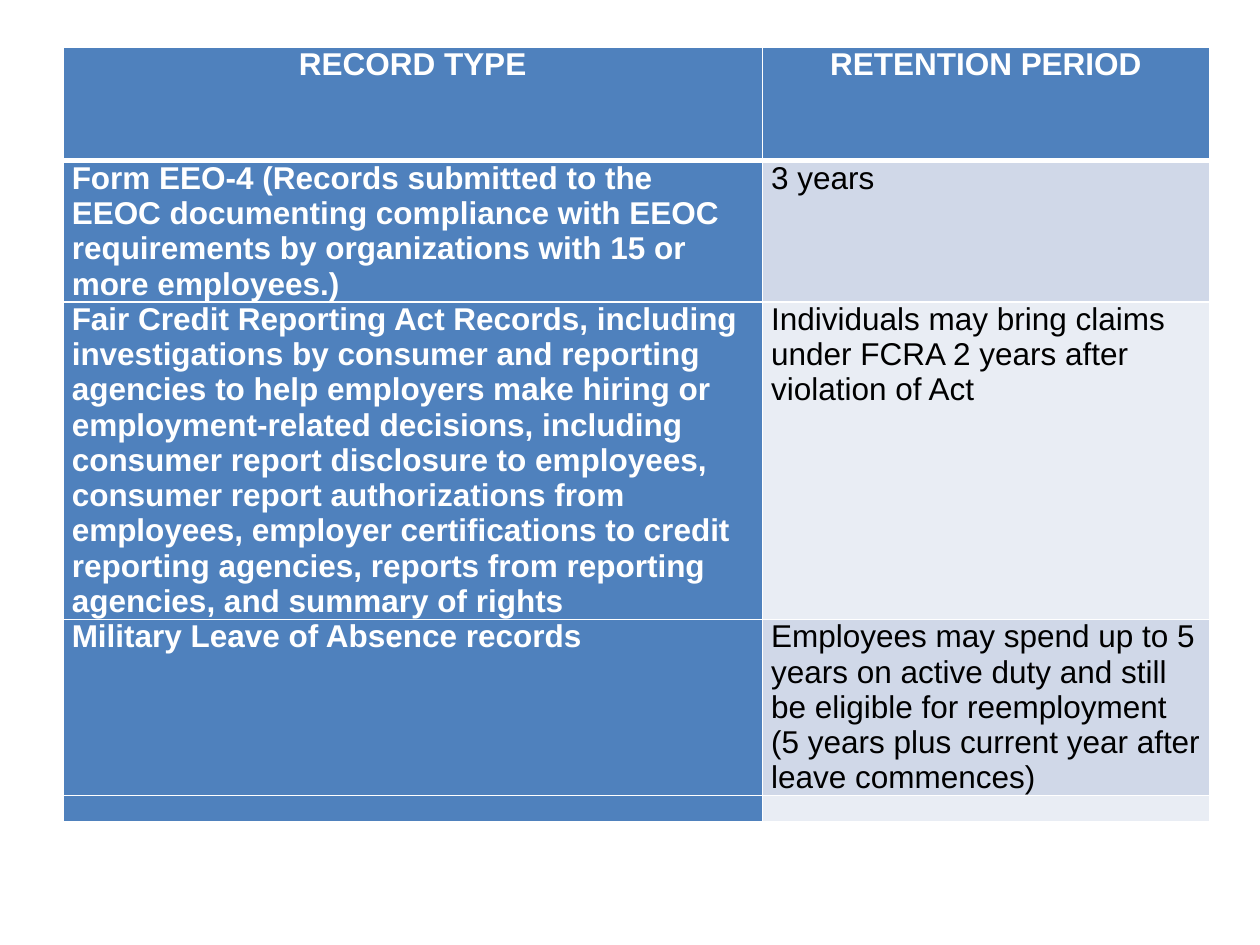
import pptx
import pptx.dml.color
import pptx.enum.text
import pptx.oxml
import pptx.oxml.ns
import pptx.util

WHITE = pptx.dml.color.RGBColor(0xFF, 0xFF, 0xFF)
BLACK = pptx.dml.color.RGBColor(0x00, 0x00, 0x00)
BLUE = pptx.dml.color.RGBColor(0x4F, 0x81, 0xBD)
BAND_DARK = pptx.dml.color.RGBColor(0xD0, 0xD8, 0xE8)
BAND_LIGHT = pptx.dml.color.RGBColor(0xE9, 0xED, 0xF4)

FONT = "Arial"
TEXT_SIZE = 18
EMPTY_SIZE = 12
COLUMN_SHARES = [0.61, 0.39]
ROW_UNITS = [2, 2, 4, 3, 0.15]

# Each cell is a list of paragraphs
RECORDS = [
    (["RECORD TYPE"], ["RETENTION PERIOD"]),
    (["Form EEO-4 (Records submitted to the",
      "EEOC documenting compliance with EEOC requirements by organizations with 15 or",
      "more employees.)"],
     ["3 years"]),
    (["Fair Credit Reporting Act Records, including investigations by consumer "
      "and reporting agencies to help employers make hiring or employment-related "
      "decisions, including consumer report disclosure to employees, consumer report "
      "authorizations from employees, employer certifications to credit reporting "
      "agencies, reports from reporting agencies, and summary of rights"],
     ["Individuals may bring claims under FCRA 2 years after violation of Act"]),
    (["Military Leave of Absence records"],
     ["Employees may spend up to 5 years on active duty and still be eligible for "
      "reemployment (5 years plus current year after leave commences)"]),
    ([], []),
]


def set_borders(cell, bottom_width):
    """White rules on all sides; they must precede the fill in the cell's XML."""
    properties = cell._tc.get_or_add_tcPr()
    for side, width in (("L", 1), ("R", 1), ("T", 1), ("B", bottom_width)):
        properties.append(pptx.oxml.parse_xml(
            f'<a:ln{side} {pptx.oxml.ns.nsdecls("a")} w="{pptx.util.Pt(width)}">'
            f'<a:solidFill><a:srgbClr val="{WHITE}"/></a:solidFill></a:ln{side}>'))


def write_cell(cell, paragraphs, color, bold, alignment):
    cell.margin_left = cell.margin_right = pptx.util.Inches(0.07)
    cell.margin_top = cell.margin_bottom = 0
    frame = cell.text_frame
    for index, wording in enumerate(paragraphs):
        paragraph = frame.add_paragraph() if index else frame.paragraphs[0]
        paragraph.alignment = alignment
        run = paragraph.add_run()
        run.text = wording
        run.font.name = FONT
        run.font.size = pptx.util.Pt(TEXT_SIZE)
        run.font.bold = bold
        run.font.color.rgb = color
    if not paragraphs:
        # An empty cell keeps a small line so that its row stays thin
        frame.paragraphs[0]._p.append(pptx.oxml.parse_xml(
            f'<a:endParaRPr {pptx.oxml.ns.nsdecls("a")} sz="{EMPTY_SIZE * 100}"/>'))


def add_retention_table(slide, left, top, width, row_unit):
    height = int(sum(ROW_UNITS) * row_unit)
    table = slide.shapes.add_table(
        len(RECORDS), len(COLUMN_SHARES), left, top, width, height).table
    for column, share in zip(table.columns, COLUMN_SHARES):
        column.width = int(width * share)
    for row, units in zip(table.rows, ROW_UNITS):
        row.height = int(row_unit * units)

    for row_index, record in enumerate(RECORDS):
        is_header = row_index == 0
        band = BAND_DARK if row_index % 2 else BAND_LIGHT
        for column_index, paragraphs in enumerate(record):
            cell = table.cell(row_index, column_index)
            is_heading = is_header or column_index == 0
            set_borders(cell, 3 if is_header else 1)
            cell.fill.solid()
            cell.fill.fore_color.rgb = BLUE if is_heading else band
            write_cell(
                cell, paragraphs, WHITE if is_heading else BLACK, is_heading,
                pptx.enum.text.PP_ALIGN.CENTER if is_header
                else pptx.enum.text.PP_ALIGN.LEFT)


def main():
    presentation = pptx.Presentation()
    presentation.slide_width = pptx.util.Inches(10)
    presentation.slide_height = pptx.util.Inches(7.5)
    slide_width, slide_height = presentation.slide_width, presentation.slide_height
    slide = presentation.slides.add_slide(presentation.slide_layouts[6])
    add_retention_table(
        slide, int(slide_width * 0.05), int(slide_height * 0.05),
        int(slide_width * 0.91), int(slide_height * 0.06))
    presentation.save("out.pptx")


if __name__ == "__main__":
    main()
